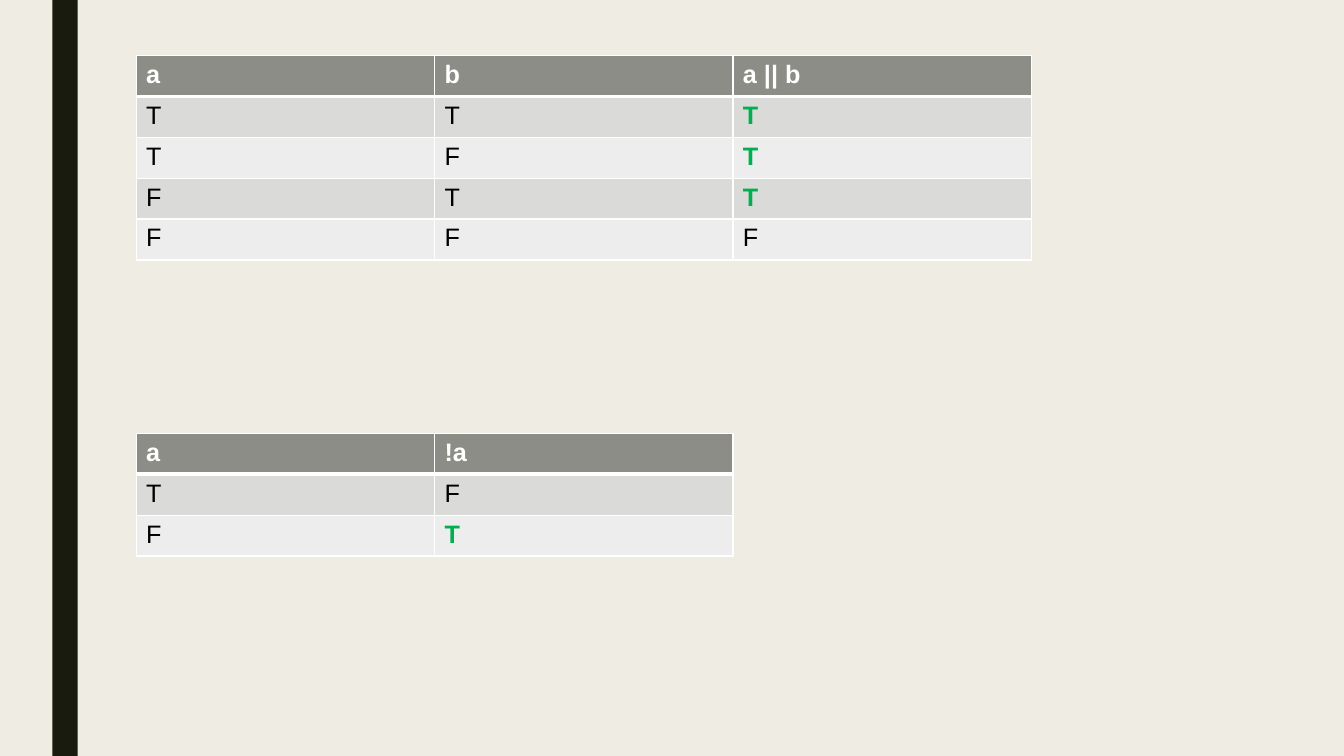
from lxml.etree import SubElement
from pptx import Presentation
from pptx.dml.color import RGBColor
from pptx.enum.shapes import MSO_SHAPE as Preset
from pptx.oxml.ns import qn
from pptx.util import Cm, Pt

PAPER = RGBColor(0xEF, 0xED, 0xE3)
DARK = RGBColor(0x19, 0x1B, 0x0E)
HEADER = RGBColor(0x8C, 0x8D, 0x86)
BANDS = RGBColor(0xED, 0xED, 0xED), RGBColor(0xDA, 0xDA, 0xD8)
WHITE = RGBColor(0xFF, 0xFF, 0xFF)
BLACK = RGBColor(0, 0, 0)
GREEN = RGBColor(0x00, 0xB0, 0x50)

TABLE_LEFT = Cm(3.43)
COLUMN_WIDTH = Cm(7.52)
ROW_HEIGHT = Cm(1.03)


def add_side_bar(page, height):
    """Draw the dark vertical bar near the left edge."""
    bar = page.shapes.add_shape(Preset.RECTANGLE, Cm(1.32), 0, Cm(0.64), height)
    bar.shadow.inherit = False
    bar.fill.solid()
    bar.fill.fore_color.rgb = DARK
    bar.line.fill.background()


def write_text(para, text, size=18, color=BLACK, bold=False, font="Arial"):
    """Write one formatted span into a paragraph."""
    span = para.add_run()
    span.text = text
    span.font.name = font
    span.font.size = Pt(size)
    span.font.bold = bold
    span.font.color.rgb = color


def set_borders(cell, top=1, bottom=1):
    """Give a cell white borders, with widths in points."""
    properties = cell._tc.get_or_add_tcPr()
    for side, width in (("L", 1), ("R", 1), ("T", top), ("B", bottom)):
        line = SubElement(properties, qn(f"a:ln{side}"), w=str(Pt(width)))
        fill = SubElement(line, qn("a:solidFill"))
        SubElement(fill, qn("a:srgbClr"), val=str(WHITE))


def fill_cell(cell, text, row, is_result):
    """Style one cell by its row, marking true results in green."""
    is_header = row == 0
    is_true = is_result and text == "T"
    set_borders(cell, top=3 if row == 1 else 1, bottom=3 if is_header else 1)
    cell.fill.solid()
    cell.fill.fore_color.rgb = HEADER if is_header else BANDS[row % 2]
    color = WHITE if is_header else GREEN if is_true else BLACK
    write_text(cell.text_frame.paragraphs[0], text, color=color, bold=is_header or is_true)


def add_truth_table(page, top, rows):
    """Add a truth table whose last column holds the result."""
    columns = len(rows[0])
    table = page.shapes.add_table(
        len(rows), columns, TABLE_LEFT, top, COLUMN_WIDTH * columns, ROW_HEIGHT * len(rows)
    ).table
    for column in table.columns:
        column.width = COLUMN_WIDTH
    for row, texts in enumerate(rows):
        table.rows[row].height = ROW_HEIGHT
        for column, text in enumerate(texts):
            fill_cell(table.cell(row, column), text, row, column == columns - 1)


def main():
    """Build the slide with the truth tables for OR and NOT."""
    deck = Presentation()
    deck.slide_width, deck.slide_height = Cm(33.87), Cm(19.05)
    page = deck.slides.add_slide(deck.slide_layouts[6])
    page.background.fill.solid()
    page.background.fill.fore_color.rgb = PAPER
    add_side_bar(page, deck.slide_height)
    add_truth_table(page, Cm(1.4), [("a", "b", "a || b"), "TTT", "TFT", "FTT", "FFF"])
    add_truth_table(page, Cm(10.92), [("a", "!a"), "TF", "FT"])
    deck.save("out.pptx")


if __name__ == "__main__":
    main()
